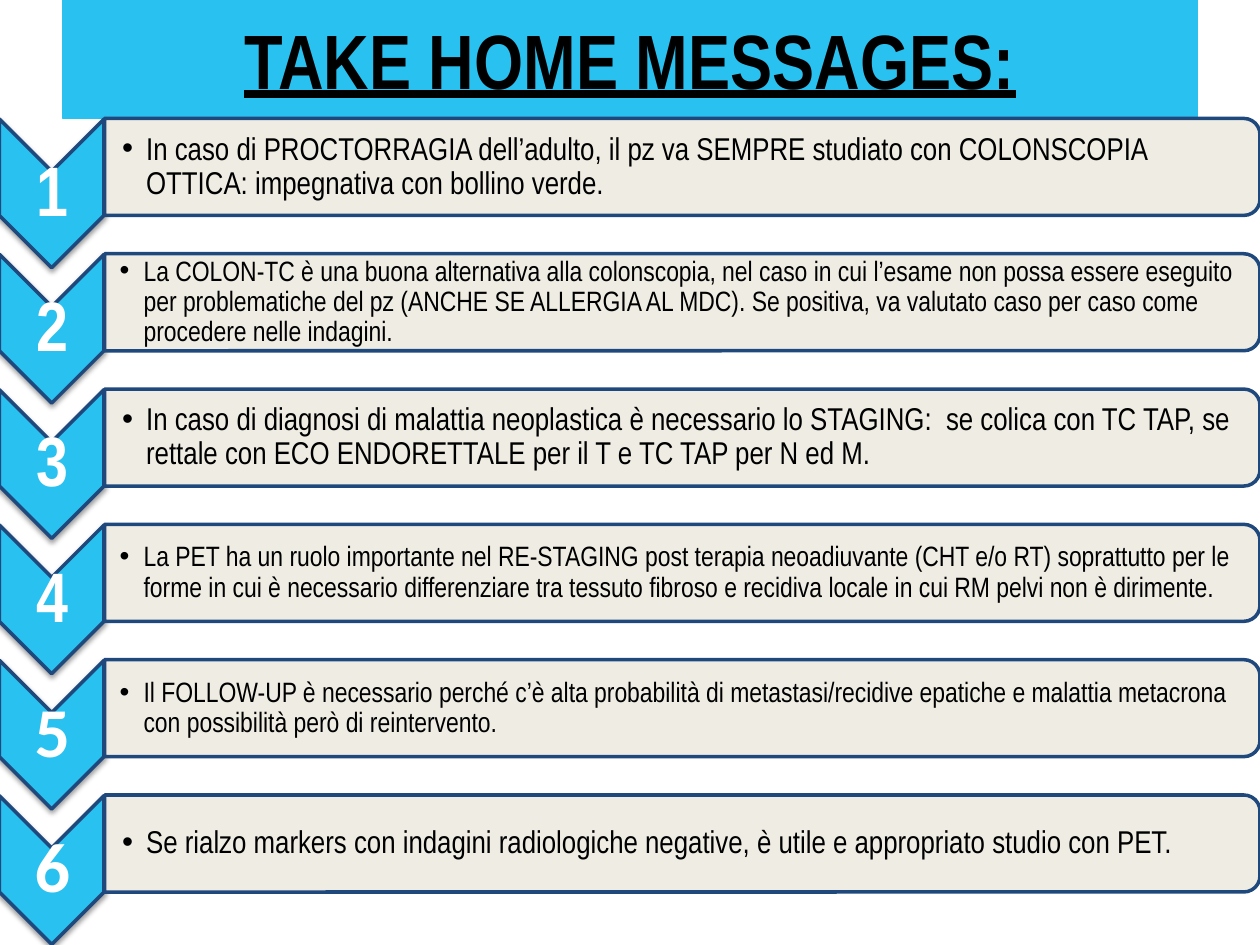
from lxml.etree import SubElement
from pptx import Presentation
from pptx.dml.color import RGBColor
from pptx.enum.shapes import MSO_SHAPE as Preset
from pptx.enum.text import MSO_ANCHOR as Anchor, PP_ALIGN as Align
from pptx.oxml.ns import qn
from pptx.util import Inches, Pt

BLUE, NAVY, CREAM = "29C1EF", "1F497D", "EEECE1"
NARROW = "Arial Narrow"

MESSAGES = [
    # number font, text size, left inset, text
    (NARROW, 18, 0.14, "In caso di PROCTORRAGIA dell’adulto, il pz va SEMPRE studiato con "
     "COLONSCOPIA  OTTICA: impegnativa con bollino verde."),
    (NARROW, 16, 0.12, "La COLON-TC è una buona alternativa alla colonscopia, nel caso in cui "
     "l’esame non possa essere eseguito per problematiche del pz (ANCHE SE ALLERGIA AL MDC). "
     "Se positiva, va valutato caso per caso come procedere nelle indagini."),
    (NARROW, 18, 0.14, "In caso di diagnosi di malattia neoplastica è necessario lo STAGING:  "
     "se colica con TC TAP, se rettale con ECO ENDORETTALE per il T e TC TAP per N ed M."),
    (NARROW, 16, 0.12, "La PET ha un ruolo importante nel RE-STAGING post terapia neoadiuvante "
     "(CHT e/o RT) soprattutto per le forme in cui è necessario differenziare tra tessuto "
     "fibroso e recidiva locale in cui RM pelvi non è dirimente."),
    ("Calibri", 16, 0.12, "Il FOLLOW-UP è necessario perché c’è alta probabilità di "
     "metastasi/recidive epatiche e malattia metacrona con possibilità però di reintervento."),
    ("Calibri", 18, 0.14, "Se rialzo markers con indagini radiologiche negative, è utile e "
     "appropriato studio con PET."),
]
FIRST_TOP, ROW_PITCH = 0.94, 1.074


def add_block(preset, left, top, width, height, fill, line, weight, rotation=0):
    shape = slide.shapes.add_shape(
        preset, Inches(left), Inches(top), Inches(width), Inches(height))
    shape.rotation = rotation
    shape.shadow.inherit = False
    shape.fill.solid()
    shape.fill.fore_color.rgb = RGBColor.from_string(fill)
    shape.line.color.rgb = RGBColor.from_string(line)
    shape.line.width = Pt(weight)
    return shape


def write(shape, text, size, font=NARROW, color="000000", bold=False, underline=False,
          align=Align.CENTER, spacing=0.9, left_inset=0.03, inset=0.03):
    """Fill a shape with one vertically centred paragraph and return it."""
    frame = shape.text_frame
    frame.word_wrap = True
    frame.vertical_anchor = Anchor.MIDDLE
    frame.margin_left = Inches(left_inset)
    frame.margin_right = frame.margin_top = frame.margin_bottom = Inches(inset)
    paragraph = frame.paragraphs[0]
    paragraph.alignment = align
    paragraph.line_spacing = spacing
    run = paragraph.add_run()
    run.text = text
    run.font.name = font
    run.font.size = Pt(size)
    run.font.bold = bold
    run.font.underline = underline
    run.font.color.rgb = RGBColor.from_string(color)
    return paragraph


presentation = Presentation()
presentation.slide_width = Inches(10)
presentation.slide_height = Inches(7.5)
slide = presentation.slides.add_slide(presentation.slide_layouts[6])

title = add_block(Preset.RECTANGLE, 0.5, 0, 9, 0.94, BLUE, BLUE, 0.75)
write(title, "TAKE HOME MESSAGES:", 44, bold=True, underline=True, spacing=1.0)

for index, (number_font, size, left_inset, message) in enumerate(MESSAGES):
    top = FIRST_TOP + index * ROW_PITCH

    # Rotated blocks are placed by their unrotated frames
    chevron = add_block(Preset.CHEVRON, -0.18, top + 0.18, 1.18, 0.83, BLUE, NAVY, 2, 90)
    effects = chevron._element.spPr.find(qn("a:effectLst"))
    shadow = SubElement(effects, qn("a:outerShdw"), blurRad=str(Pt(3.1)), dist=str(Pt(1.6)),
                        dir="5400000", rotWithShape="0")
    shadow_color = SubElement(shadow, qn("a:srgbClr"), val="000000")
    SubElement(shadow_color, qn("a:alpha"), val="38000")

    number = slide.shapes.add_textbox(
        Inches(0), Inches(top + 0.42), Inches(0.83), Inches(0.35))
    write(number, str(index + 1), 40, font=number_font, color="FFFFFF", bold=True)

    panel = add_block(Preset.ROUND_2_SAME_RECTANGLE, 5.03, top - 4.2, 0.77, 9.17,
                      CREAM, NAVY, 2, 90)
    panel_color = panel._element.spPr.find(qn("a:solidFill")).find(qn("a:srgbClr"))
    SubElement(panel_color, qn("a:alpha"), val="90000")

    body = slide.shapes.add_textbox(
        Inches(0.83), Inches(top + 0.04), Inches(9.14), Inches(0.69))
    paragraph = write(body, message, size, align=Align.LEFT,
                      left_inset=left_inset, inset=0.01)
    properties = paragraph._p.get_or_add_pPr()
    properties.set("marL", str(Inches(0.19)))
    properties.set("indent", str(-Inches(0.19)))
    SubElement(properties, qn("a:buFont"), typeface="Arial")
    SubElement(properties, qn("a:buChar"), char="•")

presentation.save("out.pptx")
